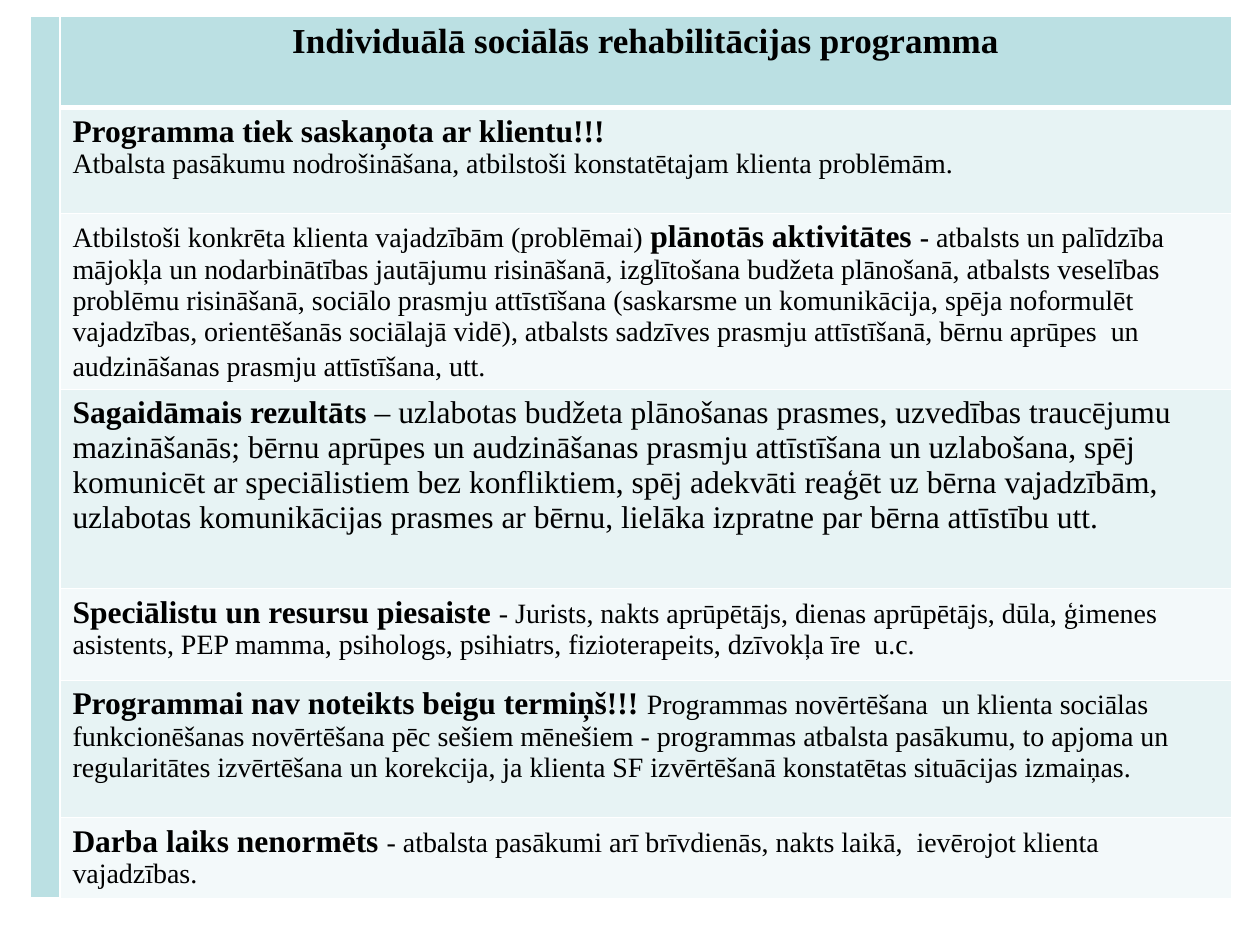
from lxml.etree import SubElement
from pptx import Presentation
from pptx.dml.color import RGBColor
from pptx.enum.text import PP_ALIGN
from pptx.oxml.ns import qn
from pptx.util import Pt

HUES = {"head": "BBE0E3", "odd": "E7F3F4", "even": "F3F9FA", "ink": "000000", "line": "FFFFFF"}
TITLE = "Individuālā sociālās rehabilitācijas programma"
BIG = {"size": 18, "bold": True}
ROWS = [
    (60.5, [
        [("Programma tiek saskaņota ar klientu!!!", BIG)],
        [("Atbalsta pasākumu nodrošināšana, atbilstoši konstatētajam klienta problēmām.", {})],
    ]),
    (100.6, [[
        ("Atbilstoši konkrēta klienta vajadzībām (problēmai) ", {}),
        ("plānotās aktivitātes ", BIG),
        ("- ", {"bold": True}),
        ("atbalsts un palīdzība mājokļa un nodarbinātības jautājumu risināšanā, "
         "izglītošana budžeta plānošanā, atbalsts veselības problēmu risināšanā, "
         "sociālo prasmju attīstīšana (saskarsme un komunikācija, spēja noformulēt "
         "vajadzības, orientēšanās sociālajā vidē), atbalsts sadzīves prasmju "
         "attīstīšanā, bērnu aprūpes  un audzināšanas prasmju attīstīšana, utt.", {}),
        (" ", {"size": 18}),
    ]]),
    (113.8, [[
        ("Sagaidāmais rezultāts ", BIG),
        ("– uzlabotas budžeta plānošanas prasmes, uzvedības traucējumu mazināšanās; "
         "bērnu aprūpes un audzināšanas prasmju attīstīšana un uzlabošana, spēj "
         "komunicēt ar speciālistiem bez konfliktiem, spēj adekvāti reaģēt uz bērna "
         "vajadzībām, uzlabotas komunikācijas prasmes ar bērnu, lielāka izpratne par "
         "bērna attīstību utt.", {"size": 18}),
    ]]),
    (52.5, [[
        ("Speciālistu un resursu piesaiste ", BIG),
        ("- Jurists, nakts aprūpētājs, dienas aprūpētājs, dūla, ģimenes asistents, "
         "PEP mamma, psihologs, psihiatrs, fizioterapeits, dzīvokļa īre  u.c.", {}),
    ]]),
    (78.4, [[
        ("Programmai nav noteikts beigu termiņš!!! ", BIG),
        ("Programmas novērtēšana  un klienta sociālas funkcionēšanas novērtēšana pēc "
         "sešiem mēnešiem - programmas atbalsta pasākumu, to apjoma un regularitātes "
         "izvērtēšana un korekcija, ja klienta SF izvērtēšanā konstatētas situācijas "
         "izmaiņas.", {}),
    ]]),
    (46.5, [[
        ("Darba laiks nenormēts ", BIG),
        ("- atbalsta pasākumi arī brīvdienās, nakts laikā,  ievērojot klienta vajadzības.", {}),
    ]]),
]


def write(para, text, size=16, bold=False):
    """Add one formatted run to a paragraph."""
    run = para.add_run()
    run.text = text
    font = run.font
    font.name, font.size, font.bold = "Times New Roman", Pt(size), bold
    font.color.rgb = RGBColor.from_string(HUES["ink"])


def paint(cell, hue, base=1):
    """Give a cell its white borders and its fill."""
    props = cell._tc.get_or_add_tcPr()
    for side, wide in zip("LRTB", (1, 1, 1, base)):
        edge = SubElement(props, qn(f"a:ln{side}"), w=str(Pt(wide)))
        solid = SubElement(edge, qn("a:solidFill"))
        SubElement(solid, qn("a:srgbClr"), val=HUES["line"])
    cell.fill.solid()
    cell.fill.fore_color.rgb = RGBColor.from_string(HUES[hue])


def fill_cell(cell, paras):
    """Write the paragraphs of runs into a cell."""
    frame = cell.text_frame
    for n, runs in enumerate(paras):
        para = frame.add_paragraph() if n else frame.paragraphs[0]
        for text, form in runs:
            write(para, text, **form)


def add_plan(slide, left, top, width, height):
    """Place the programme table with its side band in the given box."""
    rows = [(52.5, [[(TITLE, {"size": 20, "bold": True})]])] + ROWS
    table = slide.shapes.add_table(len(rows), 2, Pt(left), Pt(top), Pt(width), Pt(height)).table
    band = 17
    table.columns[0].width, table.columns[1].width = Pt(band), Pt(width - band)
    for n, (tall, paras) in enumerate(rows):
        table.rows[n].height = Pt(tall)
        side, main = table.cell(n, 0), table.cell(n, 1)
        paint(side, "head", 1 if n else 3)
        paint(main, ("odd" if n % 2 else "even") if n else "head", 1 if n else 3)
        fill_cell(main, paras)
    table.cell(0, 1).text_frame.paragraphs[0].alignment = PP_ALIGN.CENTER
    table.cell(0, 0).merge(table.cell(len(rows) - 1, 0))


def main():
    """Build the slide and save it."""
    deck = Presentation()
    deck.slide_width, deck.slide_height = Pt(720), Pt(540)
    slide = deck.slides.add_slide(deck.slide_layouts[6])
    add_plan(slide, 17, 9, 686.5, sum(tall for tall, _ in ROWS) + 52.5)
    deck.save("out.pptx")


if __name__ == "__main__":
    main()
